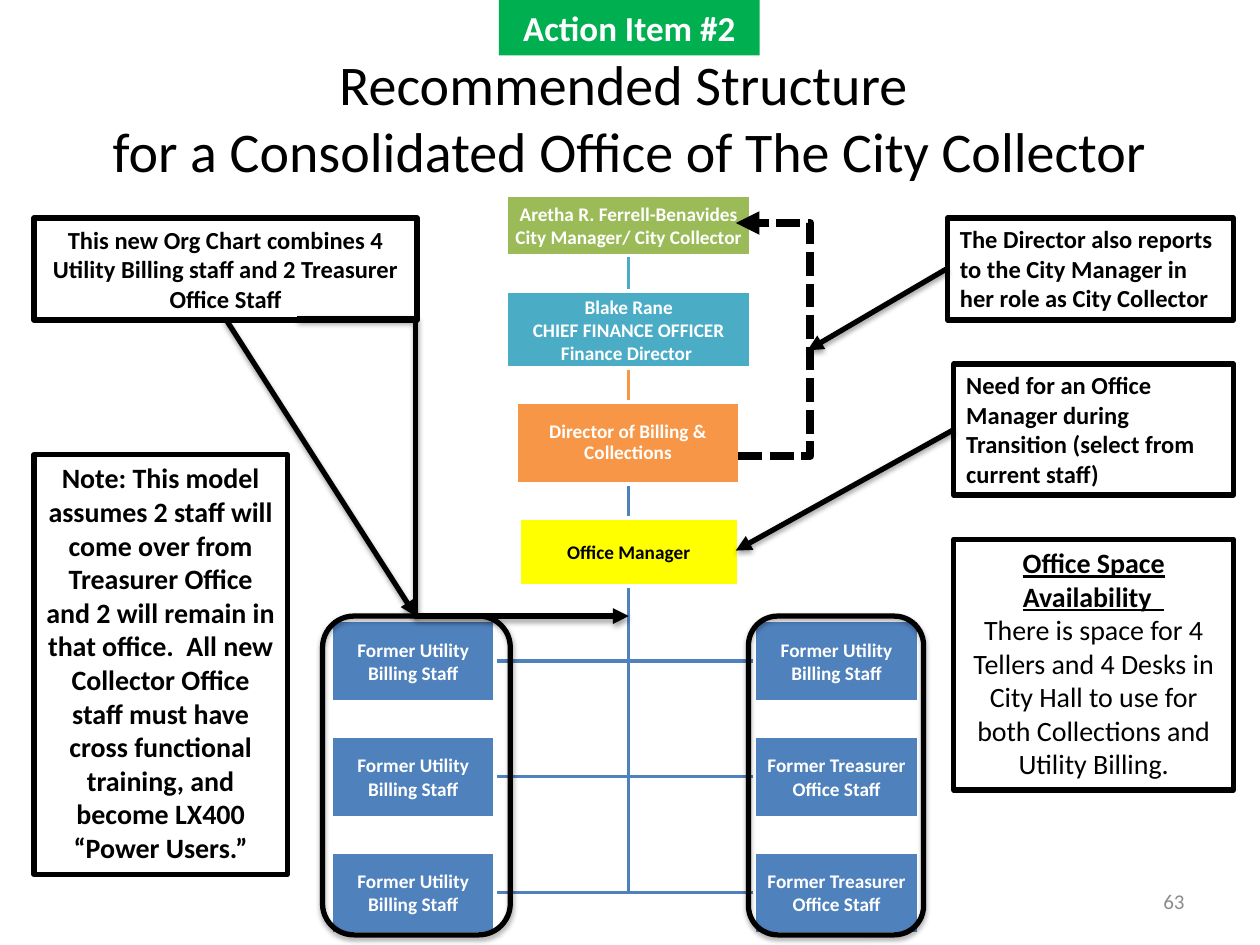
from lxml.etree import SubElement
from pptx import Presentation
from pptx.dml.color import RGBColor
from pptx.enum.dml import MSO_LINE
from pptx.enum.shapes import MSO_CONNECTOR, MSO_SHAPE
from pptx.enum.text import MSO_ANCHOR, PP_ALIGN
from pptx.oxml.ns import qn
from pptx.util import Inches, Pt

BLACK, WHITE, BLUE = "000000", "FFFFFF", "4F81BD"
TEAL, ORANGE, GREEN, YELLOW = "4BACC6", "F79646", "9BBB59", "FFFF00"
LEFT, MID, RIGHT = PP_ALIGN.LEFT, PP_ALIGN.CENTER, PP_ALIGN.RIGHT


def color(code):
    return RGBColor.from_string(code)


def effect(shape, alpha=0):
    """Set a soft shadow below the shape, or none if alpha is 0."""
    props = shape._element.spPr
    for old in props.findall(qn("a:effectLst")):
        props.remove(old)
    effects = SubElement(props, qn("a:effectLst"))
    if alpha:
        shadow = SubElement(effects, qn("a:outerShdw"), blurRad=str(Pt(3.1)),
                            dist=str(Pt(1.7)), dir="5400000", rotWithShape="0")
        black = SubElement(shadow, qn("a:srgbClr"), val=BLACK)
        SubElement(black, qn("a:alpha"), val=str(alpha * 1000))


class Chart:
    def __init__(self, slide, font):
        self.slide, self.font = slide, font

    def label(self, shape, paras, size, code=BLACK, align=MID, bold=True,
              anchor=MSO_ANCHOR.MIDDLE, inset=None, space=None):
        """Fill a shape with paragraphs: plain text, or (text, bold, underline)."""
        frame = shape.text_frame
        frame.word_wrap = True
        frame.vertical_anchor = anchor
        if inset is not None:
            frame.margin_left = frame.margin_right = Inches(inset)
            frame.margin_top = frame.margin_bottom = Inches(inset)
        for i, item in enumerate(paras):
            text, heavy, under = (item, bold, False) if isinstance(item, str) else item
            para = frame.add_paragraph() if i else frame.paragraphs[0]
            para.alignment = align
            para.line_spacing = space
            for j, line in enumerate(text.split("\n")):
                if j:
                    para.add_line_break()
                run = para.add_run()
                run.text = line
                run.font.name, run.font.size = self.font, Pt(size)
                run.font.bold, run.font.underline = heavy, under
                run.font.color.rgb = color(code)

    def text(self, x, y, w, h, words, size, **style):
        box = self.slide.shapes.add_textbox(Inches(x), Inches(y), Inches(w), Inches(h))
        self.label(box, [words], size, bold=False, **style)

    def box(self, x, y, w, h, fill=None, line=None, width=3, kind=MSO_SHAPE.RECTANGLE):
        shape = self.slide.shapes.add_shape(
            kind, Inches(x), Inches(y), Inches(w), Inches(h))
        shape.shadow.inherit = False
        if fill:
            shape.fill.solid()
            shape.fill.fore_color.rgb = color(fill)
        else:
            shape.fill.background()
        if line:
            shape.line.color.rgb = color(line)
            shape.line.width = Pt(width)
        else:
            shape.line.fill.background()
        return shape

    def post(self, x, y, w, h, fill, paras, code=WHITE, space=None):
        """Add one position of the org chart."""
        shape = self.box(x, y, w, h, fill, WHITE, 2)
        self.label(shape, paras, 11, code, inset=0.01, space=space)

    def note(self, x, y, w, h, paras, size, align=MID, anchor=MSO_ANCHOR.TOP):
        self.label(self.box(x, y, w, h, line=BLACK), paras, size,
                   align=align, anchor=anchor)

    def frame(self, x, y, w, h):
        """Add a rounded outline around a column of staff."""
        effect(self.box(x, y, w, h, line=BLACK, kind=MSO_SHAPE.ROUNDED_RECTANGLE), 35)

    def branch(self, *points):
        (x, y), *rest = [(Inches(a), Inches(b)) for a, b in points]
        build = self.slide.shapes.build_freeform(x, y)
        build.add_line_segments(rest, close=False)
        shape = build.convert_to_shape()
        shape.shadow.inherit = False
        shape.fill.background()
        shape.line.color.rgb = color(BLUE)
        shape.line.width = Pt(2)

    def link(self, start, end, code=BLACK, width=3, turn=None, arrow=True,
             dash=None, shade=38):
        """Join two points; turn is the x where an elbow bends."""
        kind = MSO_CONNECTOR.STRAIGHT if turn is None else MSO_CONNECTOR.ELBOW
        line = self.slide.shapes.add_connector(
            kind, *[Inches(n) for n in (*start, *end)])
        line.line.color.rgb = color(code)
        line.line.width = Pt(width)
        if dash:
            line.line.dash_style = dash
        props = line._element.spPr
        if arrow:
            SubElement(props.find(qn("a:ln")), qn("a:tailEnd"), type="triangle")
        if turn is not None:
            ratio = round((turn - start[0]) / (end[0] - start[0]) * 100000)
            shape = props.find(qn("a:prstGeom"))
            guides = shape.find(qn("a:avLst"))
            if guides is None:
                guides = SubElement(shape, qn("a:avLst"))
            SubElement(guides, qn("a:gd"), name="adj1", fmla=f"val {ratio}")
        effect(line, shade)


def main():
    deck = Presentation()
    deck.slide_width, deck.slide_height = Inches(10), Inches(7.5)
    chart = Chart(deck.slides.add_slide(deck.slide_layouts[6]), "Calibri")

    trunk, left, right = 4.99, 2.63, 5.99
    wide, high = 1.3, 0.65
    rows = [4.92 + 0.92 * i for i in range(3)]
    for top in reversed(rows):
        level = top + high / 2
        for side in (right, left + wide):
            chart.branch((trunk, 4.65), (trunk, level), (side, level))
    for top, end, code in ((3.84, 4.11, BLUE), (2.92, 3.19, ORANGE), (2.03, 2.31, TEAL)):
        chart.link((trunk, top), (trunk, end), code, 2, arrow=False, shade=0)

    chart.post(4.02, 1.55, 1.94, 0.48, GREEN,
               ["Aretha R. Ferrell-Benavides", "City Manager/ City Collector"])
    chart.post(4.02, 2.31, 1.94, 0.61, TEAL,
               ["Blake Rane", "CHIEF FINANCE OFFICER", "Finance Director "])
    chart.post(4.1, 3.19, 1.77, high, ORANGE,
               ["Director of Billing & Collections"], space=0.9)
    chart.post(4.12, 4.11, 1.74, 0.54, YELLOW, ["Office Manager"], BLACK)
    billing, treasury = "Former Utility Billing Staff", "Former Treasurer Office Staff"
    for top, other in zip(rows, (billing, treasury, treasury)):
        chart.post(left, top, wide, high, BLUE, [billing])
        chart.post(right, top, wide, high, BLUE, [other])

    chart.text(7.17, 6.95, 2.33, 0.4, "63", 12, code="8C8C8C", align=RIGHT)
    chart.frame(5.94, 4.89, 1.39, 2.53)
    chart.frame(2.56, 4.89, 1.49, 2.53)
    chart.link((1.79, 2.53), (3.3, 4.89))
    chart.note(0.27, 1.73, 3.04, 0.81,
               ["This new Org Chart combines 4 Utility Billing staff and 2 Treasurer "
                "Office Staff"], 14, anchor=MSO_ANCHOR.MIDDLE)
    chart.text(0.5, 0.3, 9, 1.25, "Recommended Structure \n"
               "for a Consolidated Office of The City Collector", 32)
    chart.note(7.57, 4.28, 2.22, 1.99,
               [("Office Space Availability  ", True, True),
                ("There is space for 4 Tellers and 4 Desks in City Hall to use for "
                 "both Collections and Utility Billing.", False, False)], 16)
    chart.note(7.52, 1.73, 2.27, 0.81,
               ["The Director also reports to the City Manager in her role as "
                "City Collector"], 14, LEFT)
    chart.link((7.52, 2.13), (6.41, 2.78))
    chart.note(0.27, 3.61, 2.01, 3.33,
               ["Note: This model assumes 2 staff will come over from Treasurer Office "
                "and 2 will remain in that office.  All new Collector Office staff must "
                "have cross functional training, and become LX400 “Power Users.”"], 16)
    banner = chart.box(3.96, 0, 2.07, 0.44, "00B050")
    chart.label(banner, ["Action Item #2"], 20, WHITE)
    chart.note(7.57, 2.89, 2.22, 1.04,
               ["Need for an Office Manager during Transition (select from "
                "current staff)"], 14, LEFT)
    chart.link((7.57, 3.41), (5.84, 4.37))
    chart.link((2.36, 2.53), (trunk, 4.89), turn=3.3)
    chart.link((5.86, 3.62), (5.84, 1.77), width=4.5, turn=6.43,
               dash=MSO_LINE.SQUARE_DOT, shade=0)
    deck.save("out.pptx")


if __name__ == "__main__":
    main()
